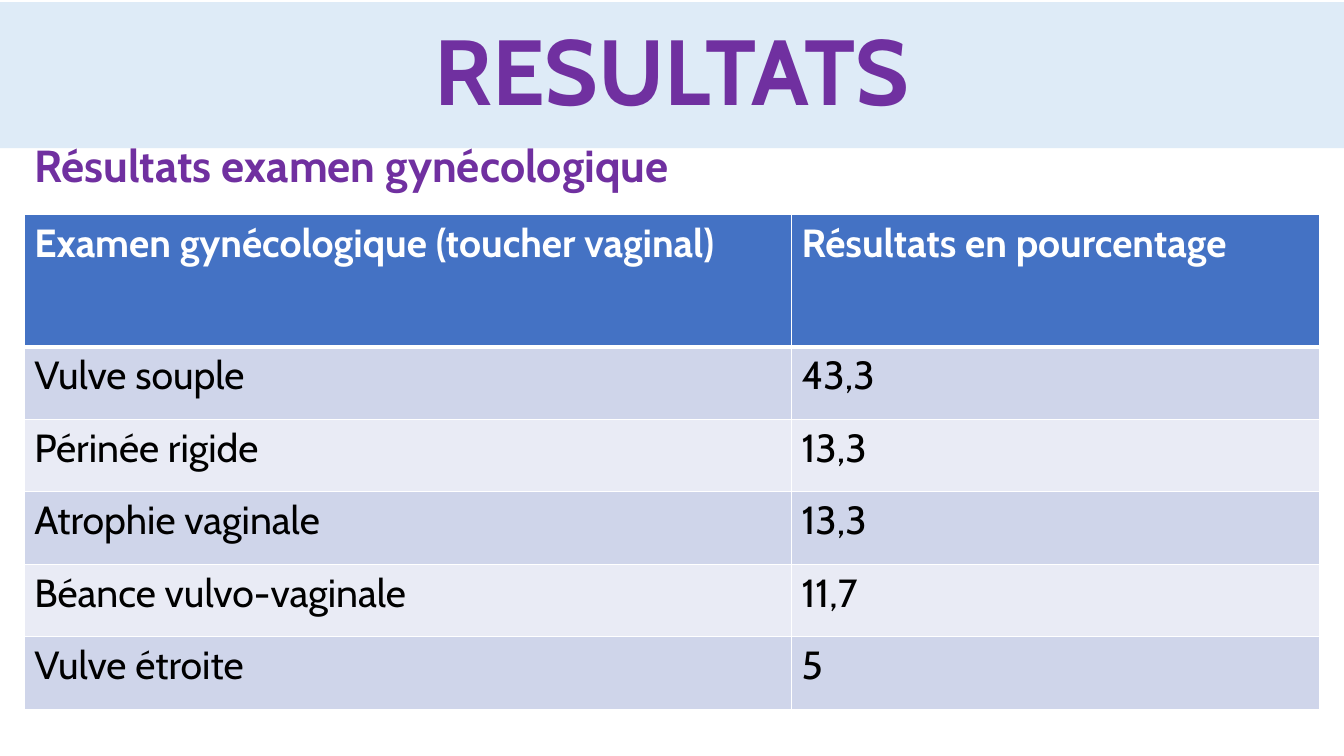
from dataclasses import dataclass

from lxml.etree import SubElement as Sub
from pptx import Presentation
from pptx.dml.color import RGBColor as RGB
from pptx.enum.text import MSO_ANCHOR as Anchor, MSO_AUTO_SIZE as AutoSize, PP_ALIGN as Align
from pptx.oxml.ns import qn
from pptx.util import Inches, Pt


@dataclass(frozen=True)
class Theme:
    font: str = "Cabin"
    accent: str = "7030A0"
    banner: str = "DEEBF7"
    header: str = "4472C4"
    bands: tuple = ("CFD5EA", "E9EBF5")
    light: str = "FFFFFF"
    dark: str = "000000"
    title_size: int = 66
    heading_size: int = 32
    table_size: int = 28
    rule: int = 1
    header_rule: int = 3


def write(tf, text, *, font, size, color, bold=False, align=Align.LEFT, spacing=1.0):
    p = tf.paragraphs[0]
    p.alignment = align
    p.line_spacing = spacing
    p.space_before = Pt(0)
    r = p.add_run()
    r.text = text
    r.font.name = font
    r.font.size = Pt(size)
    r.font.bold = bold
    r.font.color.rgb = RGB.from_string(color)
    return p


def place(sp, left, top, width, height):
    sp.left, sp.top = Inches(left), Inches(top)
    sp.width, sp.height = Inches(width), Inches(height)


class SlideBuilder:
    def __init__(self, prs, theme):
        self.theme = theme
        self.slide = prs.slides.add_slide(prs.slide_layouts[1])

    def frame(self, sp, anchor):
        tf = sp.text_frame
        tf.word_wrap = True
        tf.auto_size = AutoSize.NONE
        tf.vertical_anchor = anchor
        return tf

    def title(self, text, *box):
        t = self.theme
        sp = self.slide.shapes.title
        place(sp, *box)
        sp.fill.solid()
        sp.fill.fore_color.rgb = RGB.from_string(t.banner)
        write(self.frame(sp, Anchor.MIDDLE), text, font=t.font, size=t.title_size,
              color=t.accent, bold=True, align=Align.CENTER, spacing=0.9)

    def heading(self, text, *box):
        t = self.theme
        sp = self.slide.placeholders[1]
        place(sp, *box)
        p = write(self.frame(sp, Anchor.TOP), text, font=t.font, size=t.heading_size,
                  color=t.accent, bold=True, spacing=0.9)
        pPr = p._p.get_or_add_pPr()
        pPr.set("marL", "0")
        pPr.set("indent", "0")
        Sub(pPr, qn("a:buNone"))

    def border(self, cell, side, width):
        ln = Sub(cell._tc.get_or_add_tcPr(), qn(f"a:ln{side}"), w=str(Pt(width)))
        Sub(Sub(ln, qn("a:solidFill")), qn("a:srgbClr"), val=self.theme.light)

    def cell(self, cell, text, row):
        t = self.theme
        is_header = row == 0
        for side in "LRTB":
            under_header = (row, side) in ((0, "B"), (1, "T"))
            self.border(cell, side, t.header_rule if under_header else t.rule)
        cell.fill.solid()
        fill = t.header if is_header else t.bands[(row - 1) % 2]
        cell.fill.fore_color.rgb = RGB.from_string(fill)
        write(cell.text_frame, text, font=t.font, size=t.table_size,
              color=t.light if is_header else t.dark, bold=is_header)

    def table(self, rows, left, top, widths, heights):
        box = [Inches(v) for v in (left, top, sum(widths), sum(heights))]
        table = self.slide.shapes.add_table(len(rows), len(widths), *box).table
        for column, width in zip(table.columns, widths):
            column.width = Inches(width)
        for i, (values, height) in enumerate(zip(rows, heights)):
            table.rows[i].height = Inches(height)
            for j, text in enumerate(values):
                self.cell(table.cell(i, j), text, i)


def main():
    prs = Presentation()
    prs.slide_width, prs.slide_height = Inches(13.33), Inches(7.5)
    s = SlideBuilder(prs, Theme())
    s.title("RESULTATS", 0, 0.02, 13.33, 1.45)
    s.heading("Résultats examen gynécologique", 0.24, 1.38, 12.84, 5.82)
    results = [
        ("Examen gynécologique (toucher vaginal)", "Résultats en pourcentage"),
        ("Vulve souple", "43,3"),
        ("Périnée rigide", "13,3"),
        ("Atrophie vaginale", "13,3"),
        ("Béance vulvo-vaginale", "11,7"),
        ("Vulve étroite", "5"),
    ]
    heights = [1.31] + [0.72] * (len(results) - 1)
    s.table(results, 0.24, 2.13, (7.61, 5.24), heights)
    prs.save("out.pptx")


if __name__ == "__main__":
    main()
